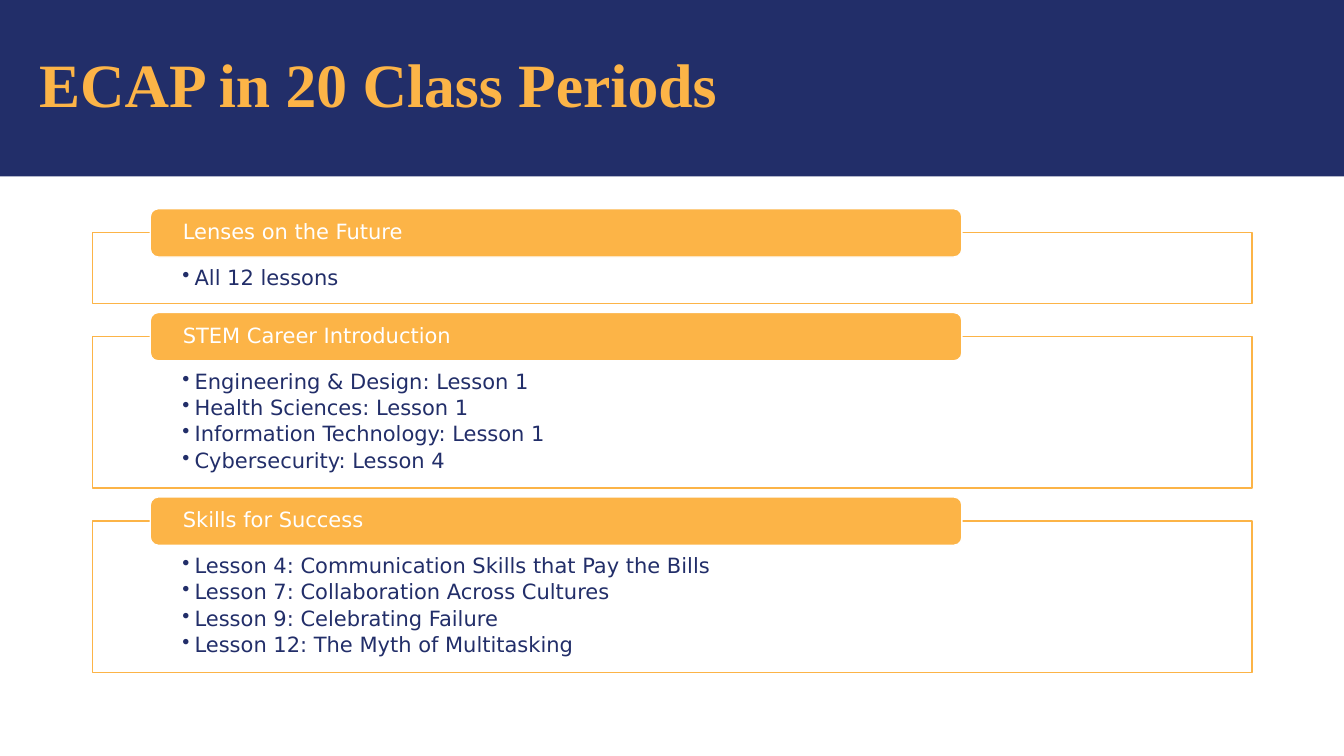
from dataclasses import dataclass

from lxml.etree import SubElement
from pptx import Presentation
from pptx.dml.color import RGBColor
from pptx.enum.shapes import MSO_SHAPE as Shape
from pptx.enum.text import MSO_ANCHOR as Anchor, PP_ALIGN as Align
from pptx.oxml.ns import qn
from pptx.util import Inches, Pt


@dataclass(frozen=True)
class Theme:
    navy: RGBColor = RGBColor(0x22, 0x2E, 0x69)
    gold: RGBColor = RGBColor(0xFC, 0xB4, 0x47)
    white: RGBColor = RGBColor(0xFF, 0xFF, 0xFF)
    title_font: str = "Times New Roman"
    body_font: str = "DejaVu Sans"
    title_size: int = 44
    body_size: int = 15


class SlideBuilder:
    def __init__(self, page, theme):
        self.page = page
        self.theme = theme

    def block(self, kind, area, fill, line=None, opacity=None):
        """Add a filled shape, outlined if a line colour is given."""
        box = self.page.shapes.add_shape(kind, *map(Inches, area))
        box.shadow.inherit = False
        box.fill.solid()
        box.fill.fore_color.rgb = fill
        if opacity is not None:
            color = box.fill._xPr.find(qn("a:solidFill"))[0]
            SubElement(color, qn("a:alpha"), val=str(opacity * 1000))
        if line is None:
            box.line.fill.background()
        else:
            box.line.color.rgb = line
            box.line.width = Pt(1)
        return box

    def add_lines(self, box, lines, insets, anchor, font, bullets=False):
        """Fill a box with left-aligned paragraphs in one format."""
        frame = box.text_frame
        sides = ("margin_left", "margin_top", "margin_right", "margin_bottom")
        frame_format = dict(zip(sides, map(Inches, insets)))
        frame_format.update(word_wrap=True, vertical_anchor=anchor)
        for name, value in frame_format.items():
            setattr(frame, name, value)
        for index, line in enumerate(lines):
            para = frame.add_paragraph() if index else frame.paragraphs[0]
            para.alignment = Align.LEFT
            para.line_spacing = 0.9
            if bullets:
                self.bullet(para)
            span = para.add_run()
            span.text = line
            span.font.color.rgb = font["color"]
            for name in ("name", "size", "bold"):
                setattr(span.font, name, font[name])

    def bullet(self, para):
        para.level = 1
        para.space_after = Pt(2.6)
        properties = para._p.get_or_add_pPr()
        properties.set("marL", str(Inches(0.12)))
        properties.set("indent", str(Inches(-0.12)))
        SubElement(properties, qn("a:buChar"), char="•")

    def body_style(self, color):
        return {"name": self.theme.body_font, "size": Pt(self.theme.body_size),
                "bold": False, "color": color}

    def title(self, text):
        theme = self.theme
        self.block(Shape.RECTANGLE, (0, -0.02, 13.33, 1.77), theme.navy)
        box = self.page.shapes.add_textbox(
            *map(Inches, (0.29, -0.02, 9.88, 1.77)))
        font = {"name": theme.title_font, "size": Pt(theme.title_size),
                "bold": True, "color": theme.gold}
        self.add_lines(box, [text], (0.1, 0.05, 0.1, 0.05), Anchor.MIDDLE, font)

    def section(self, top, height, heading, lessons):
        theme = self.theme
        # Outlined frame with the lesson list
        panel = self.block(Shape.RECTANGLE, (0.92, top, 11.5, height),
                           theme.white, theme.gold, opacity=90)
        self.add_lines(panel, lessons, (0.89, 0.34, 0.89, 0.12), Anchor.TOP,
                       self.body_style(theme.navy), bullets=True)
        # Heading tab over the frame's top edge
        tab = self.block(Shape.ROUNDED_RECTANGLE, (1.49, top - 0.24, 8.05, 0.48),
                         theme.gold, theme.white)
        self.add_lines(tab, [heading], (0.3, 0, 0.3, 0), Anchor.MIDDLE,
                       self.body_style(theme.white))


SECTIONS = [
    ("Lenses on the Future", 0.7, ["All 12 lessons"]),
    ("STEM Career Introduction", 1.5, [
        "Engineering & Design: Lesson 1",
        "Health Sciences: Lesson 1",
        "Information Technology: Lesson 1",
        "Cybersecurity: Lesson 4",
    ]),
    ("Skills for Success", 1.5, [
        "Lesson 4: Communication Skills that Pay the Bills",
        "Lesson 7: Collaboration Across Cultures",
        "Lesson 9: Celebrating Failure",
        "Lesson 12: The Myth of Multitasking",
    ]),
]
SECTION_GAP = 0.33


def main():
    deck = Presentation()
    deck.slide_width, deck.slide_height = Inches(13.33), Inches(7.5)
    page = deck.slides.add_slide(deck.slide_layouts[6])
    builder = SlideBuilder(page, Theme())

    # Title band
    builder.title("ECAP in 20 Class Periods")

    # Lesson sections, stacked with equal gaps
    top = 2.31
    for heading, height, lessons in SECTIONS:
        builder.section(top, height, heading, lessons)
        top += height + SECTION_GAP

    deck.save("out.pptx")


if __name__ == "__main__":
    main()
